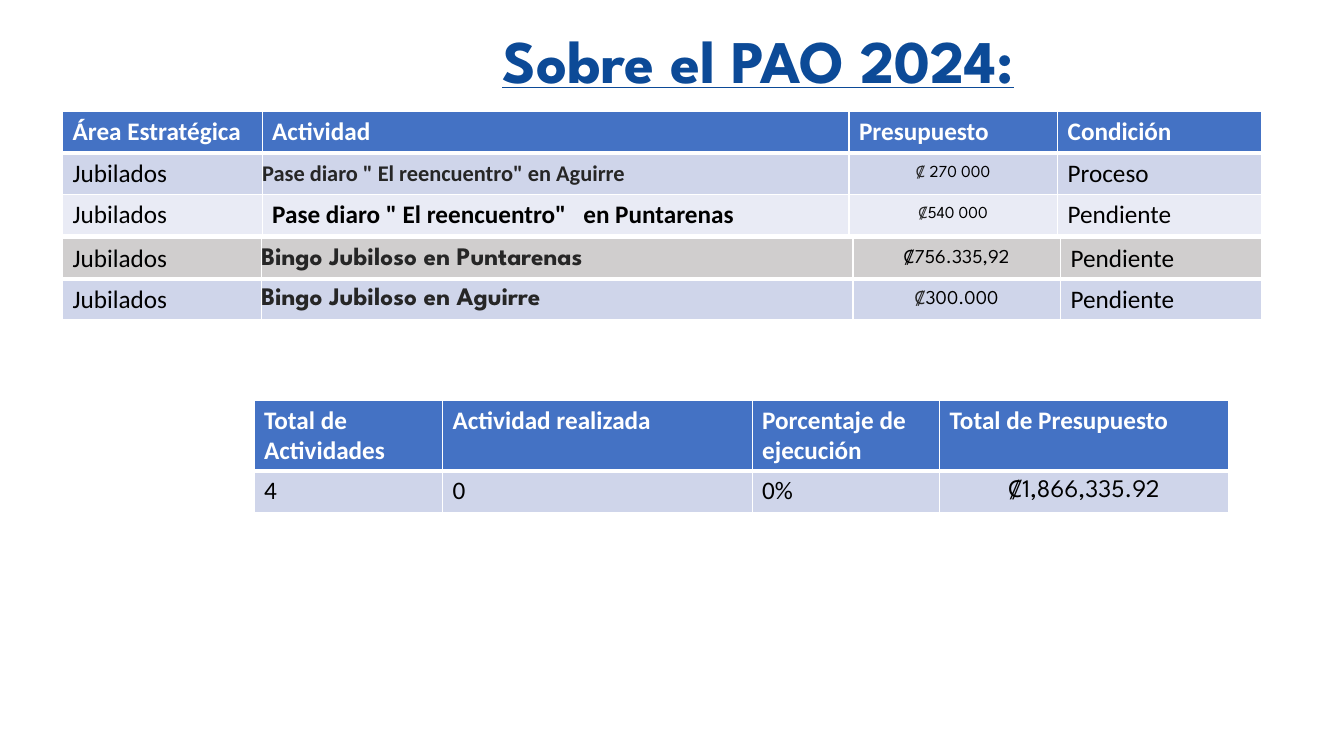
from lxml import etree
from pptx import Presentation
from pptx.dml.color import RGBColor
from pptx.enum.text import MSO_ANCHOR, PP_ALIGN
from pptx.oxml.ns import qn
from pptx.util import Inches, Pt

CENTER, LEFT = PP_ALIGN.CENTER, PP_ALIGN.LEFT
TOP, MIDDLE, BOTTOM = MSO_ANCHOR.TOP, MSO_ANCHOR.MIDDLE, MSO_ANCHOR.BOTTOM
BODY, DISPLAY = "Calibri", "League Spartan"
COLORS = {"title": "0C4A97", "head": "4472C4", "band": "CFD5EA",
          "pale": "E9EBF5", "gray": "D0CECE", "white": "FFFFFF",
          "black": "000000", "dark": "262626"}

# Content: a cell is plain text, or text with its own format
TITLE = "Sobre el PAO 2024:"
FLUSH = {"anchor": MIDDLE, "inset": 0}
TASK = {**FLUSH, "bold": True, "color": "dark"}
SHOW = {**TASK, "font": DISPLAY}
SUM = {**FLUSH, "align": CENTER, "font": DISPLAY}
SMALL = {**SUM, "size": 12, "sign": "dark"}
MID = {**SUM, "size": 14}

# Each row: fill, bottom line width, cells
TABLES = [
    {"at": (0.62, 1.11), "cols": (1.98, 5.82, 2.07, 2.02),
     "heights": (0.41, 0.41, 0.4), "rows": [
        ("head", 3, ["Área Estratégica", "Actividad", "Presupuesto", "Condición"]),
        ("band", 1, ["Jubilados",
                     ('Pase diaro " El reencuentro" en Aguirre', {**TASK, "size": 16}),
                     ("₡ 270 000", SMALL), "Proceso"]),
        ("pale", 1, ["Jubilados",
                     ('Pase diaro " El reencuentro"   en Puntarenas', {"bold": True}),
                     ("₡540 000", SMALL), "Pendiente"])]},
    {"at": (0.62, 2.37), "cols": (1.97, 5.87, 2.06, 1.99),
     "heights": (0.4, 0.4), "rows": [
        ("gray", 3, ["Jubilados", ("Bingo Jubiloso en Puntarenas", SHOW),
                     ("₡756.335,92", MID), "Pendiente"]),
        ("band", 1, ["Jubilados", ("Bingo Jubiloso en Aguirre", SHOW),
                     ("₡300.000", {**MID, "sign": "dark"}), "Pendiente"])]},
    {"at": (2.52, 3.97), "cols": (1.87, 3.07, 1.86, 2.87),
     "heights": (0.7, 0.41), "rows": [
        ("head", 3, ["Total de Actividades", "Actividad realizada",
                     "Porcentaje de ejecución", "Total de Presupuesto"]),
        ("band", 1, ["4", "0", "0%", ("₡1,866,335.92", SUM)])]},
]


def write(frame, text, size=18, font=BODY, color="black", bold=False,
          under=False, align=LEFT, space=None, sign=None):
    """Fill a text frame; sign colours the first letter apart."""
    para = frame.paragraphs[0]
    para.alignment = align
    para.line_spacing = space
    parts = [(text[0], sign), (text[1:], color)] if sign else [(text, color)]
    for part, hue in parts:
        run = para.add_run()
        run.text = part
        run.font.size, run.font.name = Pt(size), font
        run.font.bold, run.font.underline = bold, under
        run.font.color.rgb = RGBColor.from_string(COLORS[hue])


def edge(cell, base):
    """Draw white cell borders, with the given width below."""
    props = cell._tc.get_or_add_tcPr()
    for tag, width in (("lnL", 1), ("lnR", 1), ("lnT", 1), ("lnB", base)):
        line = etree.SubElement(props, qn("a:" + tag), w=str(Pt(width)))
        fill = etree.SubElement(line, qn("a:solidFill"))
        etree.SubElement(fill, qn("a:srgbClr"), val=COLORS["white"])


def paint(cell, item, fill, base):
    text, style = (item, {}) if isinstance(item, str) else item
    style = dict(style)
    if fill == "head":
        style.update(color="white", bold=True)
    cell.vertical_anchor = style.pop("anchor", TOP)
    if "inset" in style:
        inset = Inches(style.pop("inset"))
        cell.margin_left = cell.margin_right = inset
        cell.margin_top = cell.margin_bottom = inset
    edge(cell, base)
    cell.fill.solid()
    cell.fill.fore_color.rgb = RGBColor.from_string(COLORS[fill])
    write(cell.text_frame, text, **style)


def grid(slide, data):
    cols, highs, rows = data["cols"], data["heights"], data["rows"]
    left, top = data["at"]
    table = slide.shapes.add_table(
        len(rows), len(cols), Inches(left), Inches(top),
        Inches(sum(cols)), Inches(sum(highs))).table
    for col, width in zip(table.columns, cols):
        col.width = Inches(width)
    for row, high, (fill, base, items) in zip(table.rows, highs, rows):
        row.height = Inches(high)
        for cell, item in zip(row.cells, items):
            paint(cell, item, fill, base)


def main():
    deck = Presentation()
    deck.slide_width, deck.slide_height = Inches(13.33), Inches(7.5)
    slide = deck.slides.add_slide(deck.slide_layouts[6])

    # Title
    box = slide.shapes.add_textbox(Inches(2.52), Inches(0.25), Inches(10), Inches(0.76))
    frame = box.text_frame
    frame.word_wrap = True
    frame.vertical_anchor = BOTTOM
    write(frame, TITLE, size=43.2, font=DISPLAY, color="title", bold=True,
          under=True, align=CENTER, space=0.9)

    # Tables
    for data in TABLES:
        grid(slide, data)
    deck.save("out.pptx")


if __name__ == "__main__":
    main()
